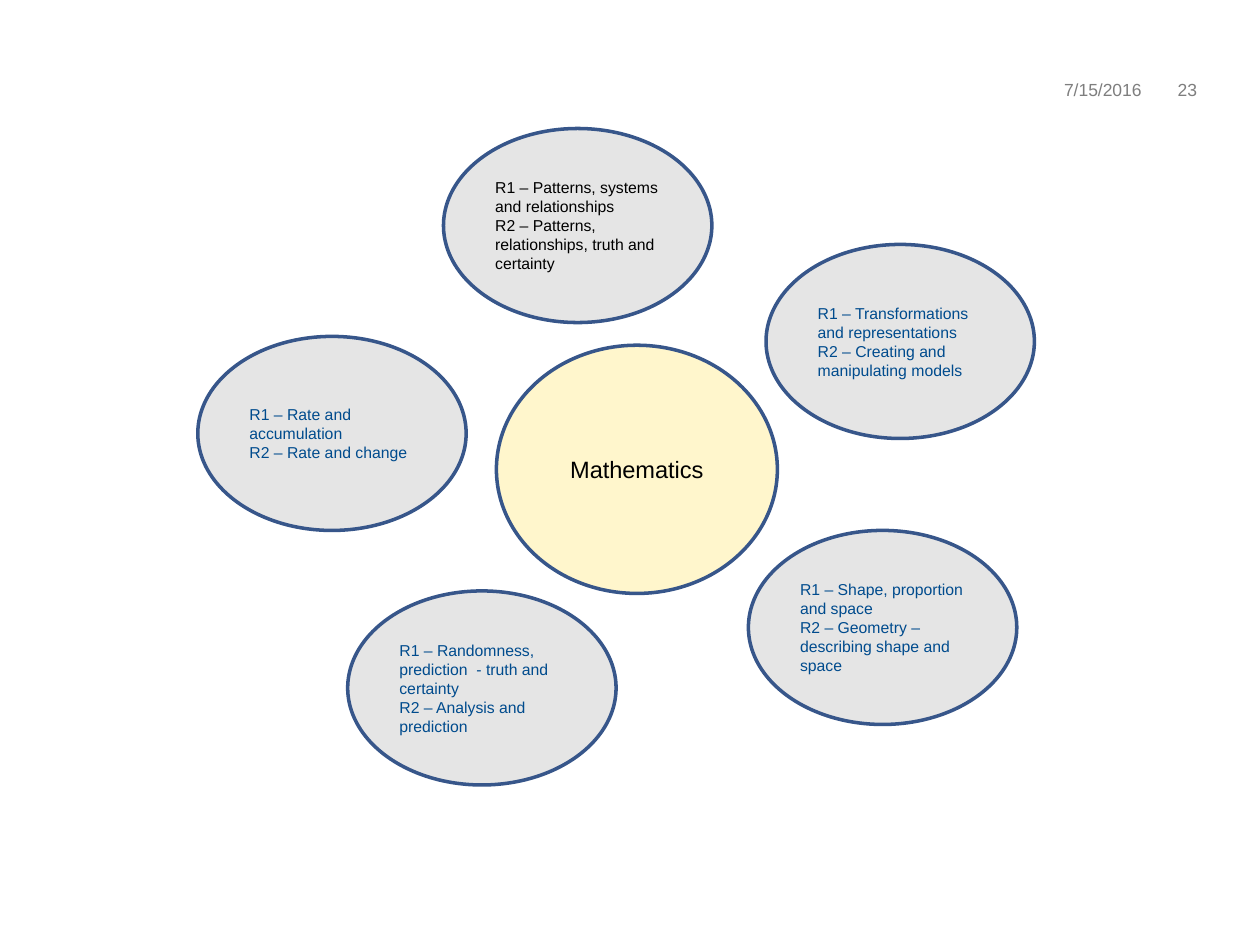
from dataclasses import dataclass

from pptx import Presentation
from pptx.dml.color import RGBColor
from pptx.enum import shapes, text
from pptx.util import Inches, Pt


@dataclass(frozen=True)
class Theme:
    font: str = "Arial"
    black: str = "000000"
    blue: str = "004B8D"
    grey: str = "7E7E7E"
    outline: str = "37568A"
    hub_fill: str = "FFF6CC"
    idea_fill: str = "E5E5E5"
    header_size: float = 10
    hub_size: float = 13.5
    idea_size: float = 9
    line_width: float = 2


THEME = Theme()
IDEA_SIZE = (2.13, 1.54)
IDEAS = [
    ((3.52, 1.02), THEME.black,
     ["R1 – Patterns, systems and relationships",
      "R2 – Patterns, relationships, truth and certainty"]),
    ((1.57, 2.67), THEME.blue,
     ["R1 – Rate and accumulation",
      "R2 – Rate and change"]),
    ((2.76, 4.69), THEME.blue,
     ["R1 – Randomness, prediction  - truth and certainty",
      "R2 – Analysis and prediction"]),
    ((5.94, 4.21), THEME.blue,
     ["R1 – Shape, proportion and space",
      "R2 – Geometry – describing shape and space"]),
    ((6.08, 1.94), THEME.blue,
     ["R1 – Transformations and representations",
      "R2 – Creating and manipulating models"]),
]


def write(tf, lines, size, color, align):
    tf.word_wrap = True
    for i, line in enumerate(lines):
        p = tf.paragraphs[0] if i == 0 else tf.add_paragraph()
        p.text = line
        p.alignment = align
        p.font.name = THEME.font
        p.font.size = Pt(size)
        p.font.color.rgb = RGBColor.from_string(color)


def add_header(s, left, top, width, height, date, number, number_width=0.44):
    date_width = width - number_width
    for x, w, label in ((left, date_width, date),
                        (left + date_width, number_width, number)):
        tf = s.shapes.add_textbox(Inches(x), Inches(top), Inches(w), Inches(height)).text_frame
        tf.margin_left = tf.margin_right = tf.margin_top = tf.margin_bottom = 0
        write(tf, [label], THEME.header_size, THEME.grey, text.PP_ALIGN.RIGHT)


def add_oval(s, box, fill, lines, size, color, align):
    sp = s.shapes.add_shape(shapes.MSO_SHAPE.OVAL, *map(Inches, box))
    sp.shadow.inherit = False
    sp.fill.solid()
    sp.fill.fore_color.rgb = RGBColor.from_string(fill)
    sp.line.color.rgb = RGBColor.from_string(THEME.outline)
    sp.line.width = Pt(THEME.line_width)
    sp.text_frame.vertical_anchor = text.MSO_ANCHOR.MIDDLE
    write(sp.text_frame, lines, size, color, align)


def main():
    prs = Presentation()
    prs.slide_width, prs.slide_height = Inches(10), Inches(7.5)
    s = prs.slides.add_slide(prs.slide_layouts[6])
    add_header(s, 7.89, 0.63, 1.61, 0.25, "7/15/2016", "23")
    add_oval(s, (3.94, 2.74, 2.23, 1.97), THEME.hub_fill, ["Mathematics"],
             THEME.hub_size, THEME.black, text.PP_ALIGN.CENTER)
    for corner, color, lines in IDEAS:
        add_oval(s, corner + IDEA_SIZE, THEME.idea_fill, lines,
                 THEME.idea_size, color, text.PP_ALIGN.LEFT)
    prs.save("out.pptx")


if __name__ == "__main__":
    main()
